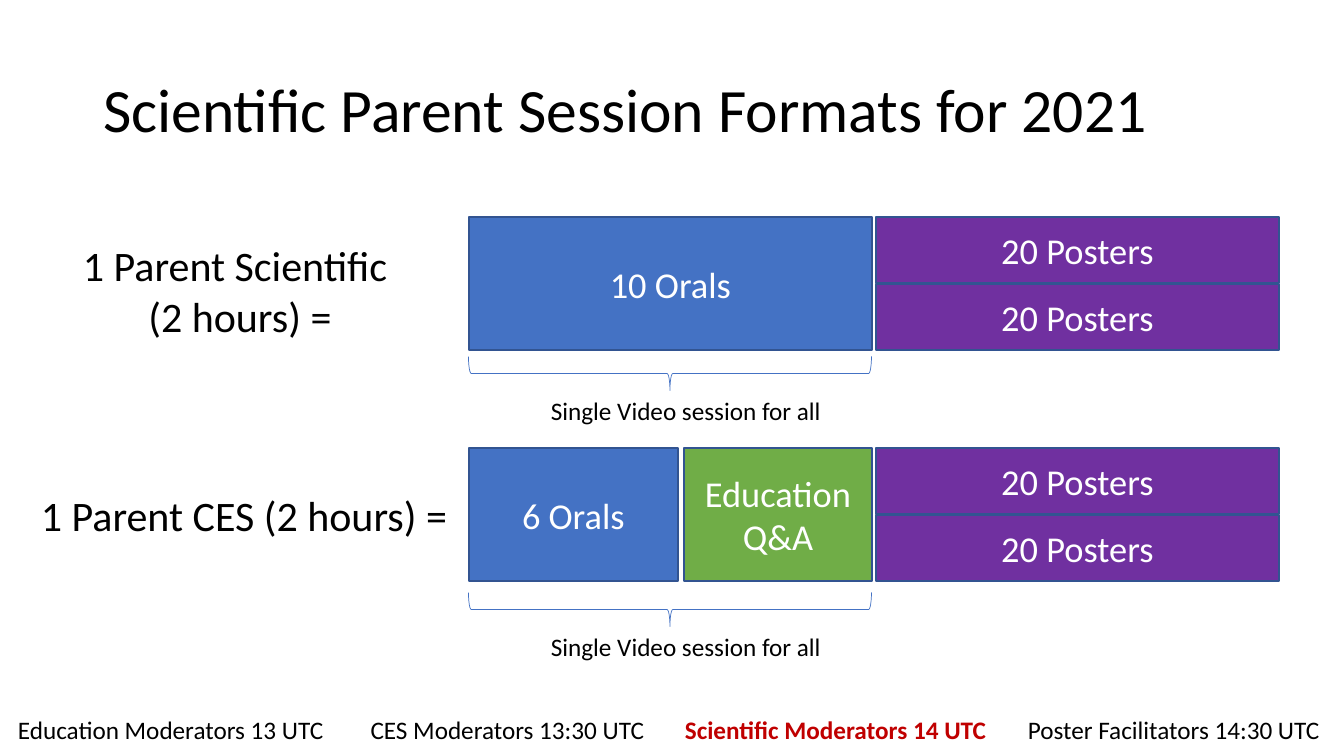
import pptx
import pptx.util
import pptx.dml.color
import pptx.enum.shapes
import pptx.enum.text

PX = 914400 / 100.8  # EMU in one px
COLORS = {
    "black": "000000", "white": "FFFFFF", "blue": "4472C4", "navy": "325491",
    "purple": "7030A0", "green": "70AD47", "red": "C00000",
}
SHAPES = pptx.enum.shapes.MSO_SHAPE
ALIGN = pptx.enum.text.PP_ALIGN
ANCHOR = pptx.enum.text.MSO_ANCHOR

deck = pptx.Presentation()
deck.slide_width, deck.slide_height = round(1344 * PX), round(756 * PX)
page = deck.slides.add_slide(deck.slide_layouts[5])


def write(box, text, size=18, color="black", align=ALIGN.LEFT, anchor=ANCHOR.TOP,
          bold=False, wrap=False, spacing=None):
    """Fill a shape with formatted text, one paragraph per line."""
    frame = box.text_frame
    frame.word_wrap = wrap
    frame.vertical_anchor = anchor
    frame.text = text
    for para in frame.paragraphs:
        para.alignment = align
        para.line_spacing = spacing
        for span in para.runs:
            span.font.name = "Calibri"
            span.font.size = pptx.util.Pt(size)
            span.font.bold = bold
            span.font.color.rgb = pptx.dml.color.RGBColor.from_string(COLORS[color])


def place(left, top, width, height, kind=None, fill=None, line=None, weight=1):
    """Add a preset shape, or a text box when no kind is given."""
    bounds = [round(length * PX) for length in (left, top, width, height)]
    if kind is None:
        return page.shapes.add_textbox(*bounds)
    shape = page.shapes.add_shape(kind, *bounds)
    shape.shadow.inherit = False
    if fill:
        shape.fill.solid()
        shape.fill.fore_color.rgb = pptx.dml.color.RGBColor.from_string(COLORS[fill])
    else:
        shape.fill.background()
    shape.line.color.rgb = pptx.dml.color.RGBColor.from_string(COLORS[line])
    shape.line.width = pptx.util.Pt(weight)
    return shape


# Title
title = page.shapes.title
title.left, title.top = round(93 * PX), round(40 * PX)
title.width, title.height = round(1159 * PX), round(146 * PX)
write(title, "Scientific Parent Session Formats for 2021", size=44,
      anchor=ANCHOR.MIDDLE, wrap=True, spacing=0.9)

# Row labels
write(place(71, 235, 338, 112), "1 Parent Scientific \n(2 hours) =", size=30, align=ALIGN.CENTER)
write(place(31, 485, 430, 61), "1 Parent CES (2 hours) =", size=30)

# Session blocks: each row ends with two stacked poster sessions
BLOCK_HEIGHT, POSTER_HEIGHT, POSTER_STEP = 133, 66, 67
session_rows = [
    (217, [("10 Orals", 469, 403, "blue")]),
    (448, [("6 Orals", 469, 209, "blue"), ("Education\nQ&A", 684, 188, "green")]),
]
for row_top, sessions in session_rows:
    blocks = [(text, left, row_top, width, BLOCK_HEIGHT, fill)
              for text, left, width, fill in sessions]
    blocks += [("20 Posters", 876, row_top + i * POSTER_STEP, 403, POSTER_HEIGHT, "purple")
               for i in range(2)]
    for text, left, top, width, height, fill in blocks:
        block = place(left, top, width, height, SHAPES.RECTANGLE, fill, "navy")
        write(block, text, size=26, color="white", align=ALIGN.CENTER,
              anchor=ANCHOR.MIDDLE, wrap=True)

# Braces, turned to open upwards, with captions
for brace_top in (172, 408):
    brace = place(653, brace_top, 34, 403, SHAPES.LEFT_BRACE, line="blue", weight=0.5)
    brace.rotation = 270
    write(place(541, brace_top + 218, 292, 40), "Single Video session for all")

# Starting times
start_times = [
    ("Education Moderators 13 UTC", 8, 334, "black"),
    (" CES Moderators 13:30 UTC", 355, 302, "black"),
    ("Scientific Moderators 14 UTC", 675, 326, "red"),
    ("Poster Facilitators 14:30 UTC", 1018, 314, "black"),
]
for text, left, width, color in start_times:
    write(place(left, 709, width, 40), text, color=color, bold=color == "red")

deck.save("out.pptx")
